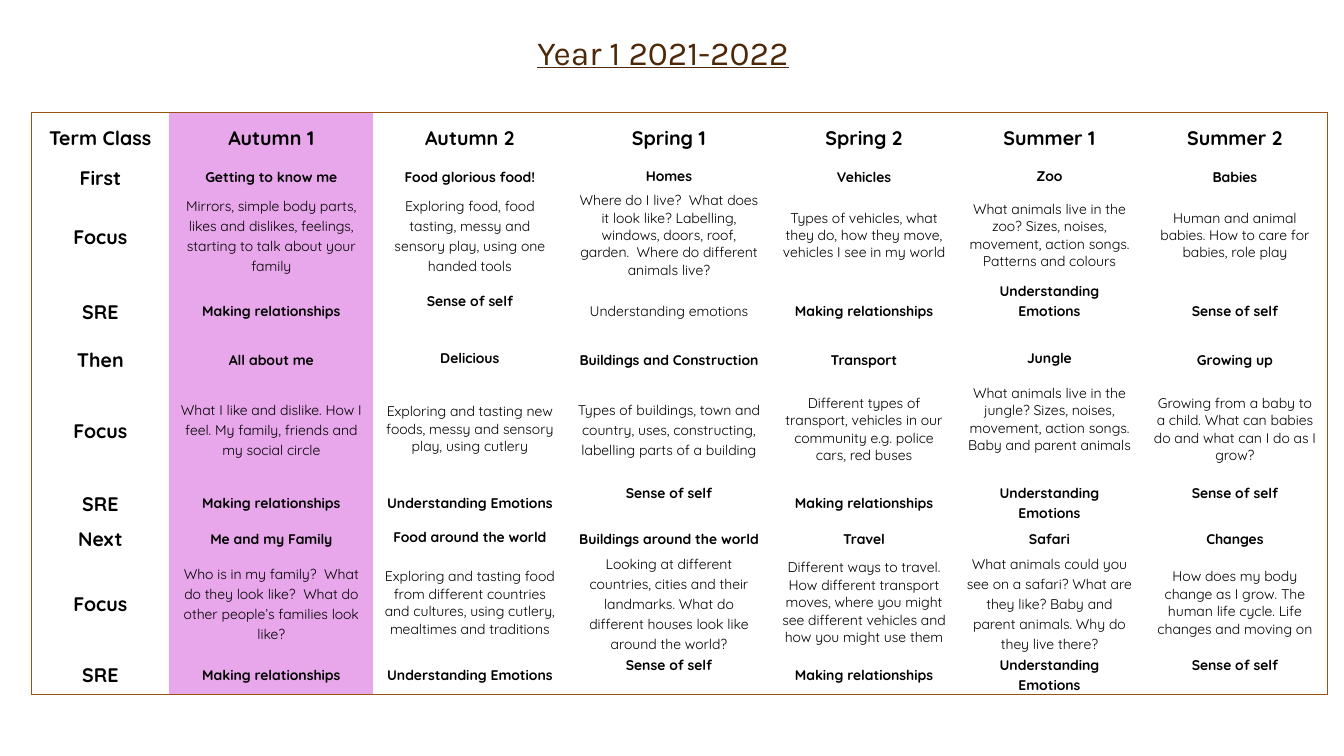
from dataclasses import dataclass

from lxml import etree
from pptx import Presentation
from pptx import util as u
from pptx.dml.color import RGBColor
from pptx.enum import text
from pptx.oxml.ns import qn


@dataclass(frozen=True)
class Theme:
    title_font: str = "Karla"
    body_font: str = "Quicksand"
    title_color: str = "4D290A"
    ink: str = "000000"
    border: str = "9A5315"
    paper: str = "FFFFFF"
    highlight: str = "E8A7EB"
    title_size: int = 24
    heading_size: int = 14
    body_size: int = 10
    border_width: int = 1
    loose: float = 1.15
    tight: float = 1.0


@dataclass(frozen=True)
class Entry:
    """A table entry; raised is the number of points kept free below it."""
    wording: str
    tight: bool = False
    bold: bool = True
    raised: float = 0


@dataclass(frozen=True)
class PlanRow:
    label: str
    height: float  # percent of the slide height
    entries: list[Entry]


THEME = Theme()
SLIDE_WIDTH, SLIDE_HEIGHT = u.Inches(13.33), u.Inches(7.5)
HIGHLIGHTED_COLUMN = 1
COLUMN_SHARES = [10.28, 15.15, 14.4, 15.23, 13.8, 13.8, 13.8]
TITLE = "Year 1 2021-2022"

RELATIONSHIPS = Entry("Making relationships")
EMOTIONS = Entry("Understanding Emotions")
SELF = Entry("Sense of self")
RAISED_SELF = Entry("Sense of self", raised=14.4)


def topic(wording: str) -> Entry:
    return Entry(wording, tight=True)


def loose(wording: str) -> Entry:
    return Entry(wording, bold=False)


def tight(wording: str, raised: float = 0) -> Entry:
    return Entry(wording, tight=True, bold=False, raised=raised)


PLAN = [
    PlanRow("Term Class", 6.27, [Entry(f"{season} {half}") for season in
                                 ("Autumn", "Spring", "Summer") for half in (1, 2)]),
    # First theme
    PlanRow("First", 4.13, [
        Entry("Getting to know me"), Entry("Food glorious food!"), topic("Homes"),
        Entry("Vehicles"), topic("Zoo"), Entry("Babies")]),
    PlanRow("Focus", 11.6, [
        loose("Mirrors, simple body parts, likes and dislikes, feelings, starting to talk about your family"),
        loose("Exploring food, food tasting, messy and sensory play, using one handed tools"),
        tight("Where do I live?  What does it look like? Labelling, windows, doors, roof, garden.  "
              "Where do different animals live?"),
        tight("Types of vehicles, what they do, how they move, vehicles I see in my world"),
        tight("What animals live in the zoo? Sizes, noises, movement, action songs. Patterns and colours"),
        tight("Human and animal babies. How to care for babies, role play")]),
    PlanRow("SRE", 8.13, [
        RELATIONSHIPS, RAISED_SELF, loose("Understanding emotions"), RELATIONSHIPS,
        Entry("Understanding Emotions", raised=14.4), SELF]),
    # Second theme
    PlanRow("Then", 4.8, [
        Entry("All about me"), topic("Delicious"), Entry("Buildings and Construction"),
        Entry("Transport"), topic("Jungle"), Entry("Growing up")]),
    PlanRow("Focus", 13.87, [
        loose("What I like and dislike. How I feel. My family, friends and my social circle"),
        tight("Exploring and tasting new foods, messy and sensory play, using cutlery"),
        loose("Types of buildings, town and country, uses, constructing, labelling parts of a building"),
        tight("Different types of transport, vehicles in our community e.g. police cars, red buses"),
        tight("What animals live in the jungle? Sizes, noises, movement, action songs. "
              "Baby and parent animals", raised=14.4),
        tight("Growing from a baby to a child. What can babies do and what can I do as I grow?")]),
    PlanRow("SRE", 5.47, [
        RELATIONSHIPS, EMOTIONS, RAISED_SELF, RELATIONSHIPS, EMOTIONS, RAISED_SELF]),
    # Third theme
    PlanRow("Next", 3.87, [
        Entry("Me and my Family"), topic("Food around the world"),
        Entry("Buildings around the world"), Entry("Travel"), Entry("Safari"), Entry("Changes")]),
    PlanRow("Focus", 13.33, [
        loose("Who is in my family?  What do they look like?  What do other people’s families look like?"),
        tight("Exploring and tasting food from different countries and cultures, using cutlery, "
              "mealtimes and traditions"),
        loose("Looking at different countries, cities and their landmarks. "
              "What do different houses look like around the world?"),
        tight("Different ways to travel. How different transport moves, where you might see "
              "different vehicles and how you might use them"),
        loose("What animals could you see on a safari? What are they like? "
              "Baby and parent animals. Why do they live there?"),
        tight("How does my body change as I grow. The human life cycle. Life changes and moving on")]),
    PlanRow("SRE", 5.47, [
        RELATIONSHIPS, EMOTIONS, RAISED_SELF, RELATIONSHIPS, EMOTIONS, RAISED_SELF]),
]


def across(percent: float) -> int:
    return round(SLIDE_WIDTH * percent / 100)


def down(percent: float) -> int:
    return round(SLIDE_HEIGHT * percent / 100)


def apply(target, formats: dict) -> None:
    for attribute, value in formats.items():
        setattr(target, attribute, value)


def write(frame, wording: str, spacing: float, color: str, formats: dict) -> None:
    paragraph = frame.paragraphs[0]
    apply(paragraph, {"alignment": text.PP_ALIGN.CENTER, "line_spacing": spacing})
    run = paragraph.add_run()
    run.text = wording
    apply(run.font, formats)
    run.font.color.rgb = RGBColor.from_string(color)


def draw_borders(cell, drawn: dict[str, bool]) -> None:
    properties = cell._tc.get_or_add_tcPr()
    for position, (side, visible) in enumerate(drawn.items()):
        edge = etree.Element(qn(f"a:ln{side}"), w=str(u.Pt(THEME.border_width)))
        if visible:
            fill = etree.SubElement(edge, qn("a:solidFill"))
            etree.SubElement(fill, qn("a:srgbClr"), val=THEME.border)
        else:
            etree.SubElement(edge, qn("a:noFill"))
        properties.insert(position, edge)


def draw_title(slide) -> None:
    title = slide.shapes.add_textbox(across(6.83), down(3.6), across(85), down(7.33))
    apply(title.text_frame, {"word_wrap": True, "vertical_anchor": text.MSO_ANCHOR.MIDDLE})
    write(title.text_frame, TITLE, 0.9, THEME.title_color,
          {"name": THEME.title_font, "size": u.Pt(THEME.title_size), "underline": True})


def draw_plan(slide) -> None:
    plan = slide.shapes.add_table(
        len(PLAN), len(COLUMN_SHARES), across(2.33), down(14.93),
        across(sum(COLUMN_SHARES)), down(sum(row.height for row in PLAN))).table
    apply(plan, {"first_row": False, "horz_banding": False})
    for column, share in zip(plan.columns, COLUMN_SHARES):
        column.width = across(share)

    last_row, last_column = len(PLAN) - 1, len(COLUMN_SHARES) - 1
    for r, row in enumerate(PLAN):
        plan.rows[r].height = down(row.height)
        for c, entry in enumerate([Entry(row.label), *row.entries]):
            cell = plan.cell(r, c)
            apply(cell, {"margin_left": u.Inches(0.1), "margin_right": u.Inches(0.1),
                         "margin_top": 0, "margin_bottom": u.Pt(entry.raised),
                         "vertical_anchor": text.MSO_ANCHOR.MIDDLE})
            cell.fill.solid()
            cell.fill.fore_color.rgb = RGBColor.from_string(
                THEME.highlight if c == HIGHLIGHTED_COLUMN else THEME.paper)
            size = THEME.heading_size if r == 0 or c == 0 else THEME.body_size
            write(cell.text_frame, entry.wording, THEME.tight if entry.tight else THEME.loose,
                  THEME.ink, {"name": THEME.body_font, "size": u.Pt(size), "bold": entry.bold})
            draw_borders(cell, {"L": c == 0, "R": c == last_column,
                                "T": r == 0, "B": r == last_row})


def main() -> None:
    deck = Presentation()
    apply(deck, {"slide_width": SLIDE_WIDTH, "slide_height": SLIDE_HEIGHT})
    slide = deck.slides.add_slide(deck.slide_layouts[6])
    draw_title(slide)
    draw_plan(slide)
    deck.save("out.pptx")


if __name__ == "__main__":
    main()
